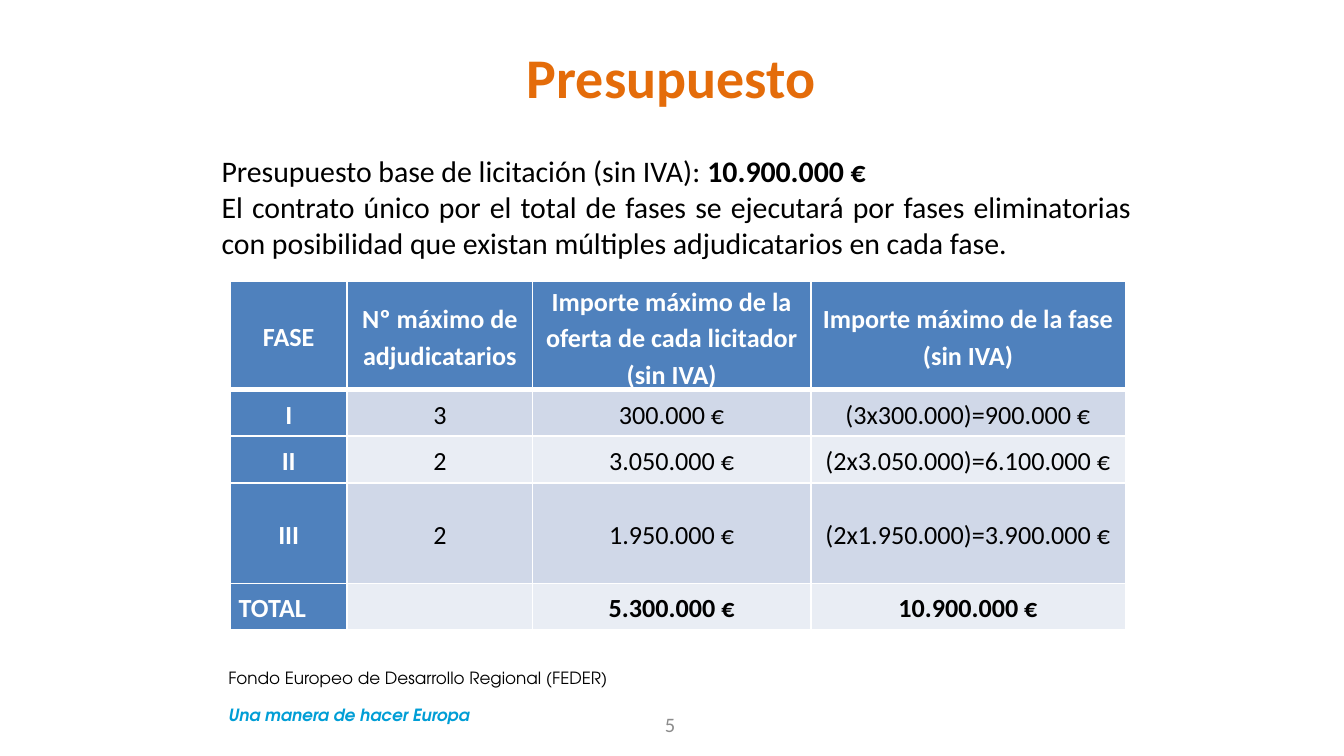
from lxml import etree
from pptx import Presentation
from pptx.dml.color import RGBColor
from pptx.enum.text import MSO_ANCHOR as Anchor, PP_ALIGN as Align
from pptx.oxml.ns import qn
from pptx.util import Pt


def style(font, size, color, bold=False, name="Calibri"):
    font.name, font.size, font.bold = name, Pt(size), bold
    font.color.rgb = RGBColor.from_string(color)


def border(cell, side, width, color="FFFFFF"):
    line = etree.SubElement(cell._tc.get_or_add_tcPr(), qn(f"a:{side}"), w=str(Pt(width)))
    fill = etree.SubElement(line, qn("a:solidFill"))
    etree.SubElement(fill, qn("a:srgbClr"), val=color)


presentation = Presentation()
presentation.slide_width, presentation.slide_height = Pt(720), Pt(405)
slide = presentation.slides.add_slide(presentation.slide_layouts[5])

title = slide.shapes.title
title.left, title.top, title.width, title.height = Pt(116.6), Pt(16.5), Pt(486), Pt(49)
title.text_frame.text = "Presupuesto"
title.text_frame.vertical_anchor = Anchor.MIDDLE
paragraph = title.text_frame.paragraphs[0]
paragraph.alignment = Align.CENTER
style(paragraph.font, 30, "E46C0A", True)

body = slide.shapes.add_textbox(Pt(111.6), Pt(78.5), Pt(502), Pt(264)).text_frame
body.word_wrap = True
paragraph = body.paragraphs[0]
paragraph.alignment = Align.JUSTIFY
style(paragraph.font, 16, "000000")
paragraph.add_run().text = "Presupuesto base de licitación (sin IVA): "
amount = paragraph.add_run()
amount.text = "10.900.000 €"
amount.font.bold = True
paragraph = body.add_paragraph()
paragraph.text = ("El contrato único por el total de fases se ejecutará por fases eliminatorias "
                  "con posibilidad que existan múltiples adjudicatarios en cada fase.")
paragraph.alignment = Align.JUSTIFY
style(paragraph.font, 16, "000000")

rows = [
    ["FASE", "Nº máximo de adjudicatarios",
     "Importe máximo de la oferta de cada licitador (sin IVA)",
     "Importe máximo de la fase (sin IVA)"],
    ["I", "3", "300.000 €", "(3x300.000)=900.000 €"],
    ["II", "2", "3.050.000 €", "(2x3.050.000)=6.100.000 €"],
    ["III", "2", "1.950.000 €", "(2x1.950.000)=3.900.000 €"],
    ["TOTAL", "", "5.300.000 €", "10.900.000 €"],
]
column_widths = [62.6, 99.4, 149, 168.5]
row_heights = [57.5, 25, 25, 54, 24.5]
table = slide.shapes.add_table(len(rows), len(column_widths), Pt(123.4), Pt(150.8),
                               Pt(sum(column_widths)), Pt(sum(row_heights))).table
for column, width in zip(table.columns, column_widths):
    column.width = Pt(width)
for row, height in zip(table.rows, row_heights):
    row.height = Pt(height)

last_row = len(rows) - 1
for row_index, texts in enumerate(rows):
    for column_index, text in enumerate(texts):
        cell = table.cell(row_index, column_index)
        is_header = row_index == 0 or column_index == 0
        for side in ("lnL", "lnR", "lnT", "lnB"):
            thick = (row_index, side) in ((0, "lnB"), (1, "lnT"))
            border(cell, side, 3 if thick else 1)
        cell.fill.solid()
        band = "D0D8E8" if row_index % 2 else "E9EDF4"
        cell.fill.fore_color.rgb = RGBColor.from_string("4F81BD" if is_header else band)
        cell.vertical_anchor = Anchor.MIDDLE
        cell.margin_left = cell.margin_right = Pt(4.5)
        cell.margin_top = cell.margin_bottom = 0
        cell.text = text
        paragraph = cell.text_frame.paragraphs[0]
        paragraph.alignment = Align.LEFT if text == "TOTAL" else Align.CENTER
        paragraph.line_spacing = 1.15
        style(paragraph.font, 14, "FFFFFF" if is_header else "000000",
              is_header or row_index == last_row)

footer = slide.shapes.add_textbox(Pt(115.2), Pt(358.6), Pt(234), Pt(29)).text_frame
footer.word_wrap = True
footer.vertical_anchor = Anchor.MIDDLE
fund = footer.paragraphs[0]
fund.text = "Fondo Europeo de Desarrollo Regional (FEDER)"
style(fund.font, 9, "000000", name="TeX Gyre Adventor")
motto = footer.add_paragraph()
motto.text = "Una manera de hacer Europa"
motto.space_before = Pt(9)
motto.font.italic = True
style(motto.font, 9, "009ED6", True, "TeX Gyre Adventor")

number = slide.shapes.add_textbox(Pt(339), Pt(377.5), Pt(40), Pt(21.5)).text_frame
number.word_wrap = True
number.vertical_anchor = Anchor.MIDDLE
paragraph = number.paragraphs[0]
paragraph.text = "5"
paragraph.alignment = Align.CENTER
style(paragraph.font, 11, "8C8C8C")

presentation.save("out.pptx")
